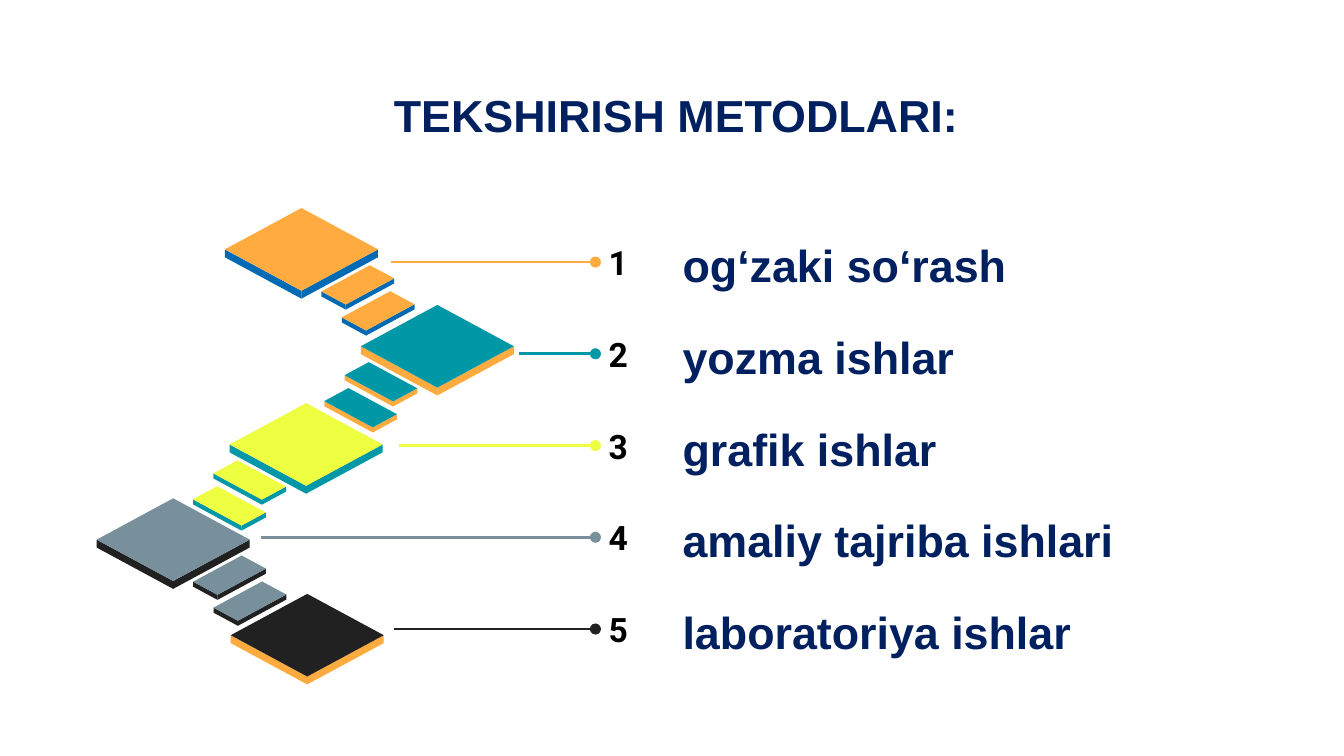
from dataclasses import dataclass

from lxml import etree
from pptx import Presentation
from pptx import util as u
from pptx.dml.color import RGBColor
from pptx.enum import shapes, text
from pptx.oxml import ns


@dataclass(frozen=True)
class Theme:
    navy: str = "002060"
    black: str = "000000"
    orange: str = "FFAB40"
    blue: str = "006BB4"
    teal: str = "0097A7"
    lime: str = "EEFF41"
    slate: str = "78909C"
    coal: str = "212121"
    font: str = "Arial"
    digit: str = "Roboto"
    large: int = 24
    small: int = 18


T = Theme()
SLOPE = 0.54                          # rise of every tile edge
TILE, LONG, SHORT = 41, 26, 13        # edge widths of tiles and steps
STEPS = [(47.6, 44.5), (36.7, 30.6)]  # step offsets from a tile, far one first
TOP, GAP = 140.4, 49.15               # first row and row spacing

# label, face, edge, top corner of tile, direction of steps, line end
ROWS = [
    ("og‘zaki so‘rash", T.orange, T.blue, (161.5, 111.5), 1, 209.5),
    ("yozma ishlar", T.teal, T.orange, (234.3, 163.4), -1, 278),
    ("grafik ishlar", T.lime, T.teal, (164, 216), -1, 214),
    ("amaliy tajriba ishlari", T.slate, T.coal, (92.8, 267), 1, 139.7),
    ("laboratoriya ishlar", T.coal, T.orange, (164.6, 318.2), 0, 211),
]


def add_text(slide, words, box, size, color, font, middle=False):
    """Add a bold one-line text box."""
    shape = slide.shapes.add_textbox(*map(u.Pt, box))
    frame = shape.text_frame
    frame.word_wrap = True
    frame.margin_left = frame.margin_right = u.Pt(7.2)
    frame.margin_top = frame.margin_bottom = u.Pt(7.2)
    if middle:
        frame.vertical_anchor = text.MSO_ANCHOR.MIDDLE
    frame.text = words
    face = frame.paragraphs[0].runs[0].font
    face.name, face.size, face.bold = font, u.Pt(size), True
    face.color.rgb = RGBColor.from_string(color)
    return shape


def add_poly(group, points, color):
    """Add a closed, filled outline."""
    first, *rest = [(u.Pt(x), u.Pt(y)) for x, y in points]
    pen = group.shapes.build_freeform(*first)
    pen.add_line_segments(rest, close=True)
    shape = pen.convert_to_shape()
    shape.fill.solid()
    shape.fill.fore_color.rgb = RGBColor.from_string(color)
    shape.line.fill.background()
    shape.shadow.inherit = False


def add_slab(group, x, y, left, right, depth, face, edge):
    """Add a slab from its top corner and the widths of its two edges."""
    west = (x - left, y + left * SLOPE)
    east = (x + right, y + right * SLOPE)
    south = (x + right - left, y + (left + right) * SLOPE)
    base = (south[0], south[1] + depth)
    for side in (west, east):
        add_poly(group, [side, (side[0], side[1] + depth), base, south], edge)
    add_poly(group, [(x, y), west, south, east], face)


def add_stair(slide, face, edge, top, way):
    """Add one tile with the two steps that lead down from it."""
    group = slide.shapes.add_group_shape()
    x, y = top
    if way:
        left, right = (LONG, SHORT) if way > 0 else (SHORT, LONG)
        for dx, dy in STEPS:
            add_slab(group, x + way * dx, y + dy, left, right, 2.7, face, edge)
    add_slab(group, x, y, TILE, TILE, 4.2, face, edge)


def add_lead(slide, box, end, y, color):
    """Add a line with a round head that starts at a number box."""
    line = slide.shapes.add_connector(
        shapes.MSO_CONNECTOR.STRAIGHT, box.left, u.Pt(y), u.Pt(end), u.Pt(y))
    line.begin_connect(box, 1)
    line.line.width = u.Pt(1.5)
    line.line.color.rgb = RGBColor.from_string(color)
    stroke = line.line._get_or_add_ln()
    etree.SubElement(stroke, ns.qn("a:headEnd"), type="oval")
    etree.SubElement(stroke.getparent(), ns.qn("a:effectLst"))


def main():
    deck = Presentation()
    deck.slide_width, deck.slide_height = u.Pt(720), u.Pt(405)
    slide = deck.slides.add_slide(deck.slide_layouts[6])

    # Title
    title = add_text(slide, "TEKSHIRISH METODLARI:", (83.5, 42.5, 557.3, 38),
                     T.large, T.navy, T.font, True)
    title.text_frame.paragraphs[0].alignment = text.PP_ALIGN.CENTER

    # Staircase, lower flights behind upper ones
    for i in (4, 2, 3, 0, 1):
        add_stair(slide, *ROWS[i][1:5])

    # Labels, numbers and leader lines
    for i, (label, face, *_, end) in enumerate(ROWS):
        y = TOP + i * GAP
        note = add_text(slide, label, (358.6, y - 24.5, 330, 44),
                        T.large, T.navy, T.font)
        note.text_frame.paragraphs[0].line_spacing = 1.15
        box = add_text(slide, str(i + 1), (319, y - 17, 25.2, 34),
                       T.small, T.black, T.digit, True)
        add_lead(slide, box, end, y, face)

    deck.save("out.pptx")


if __name__ == "__main__":
    main()
